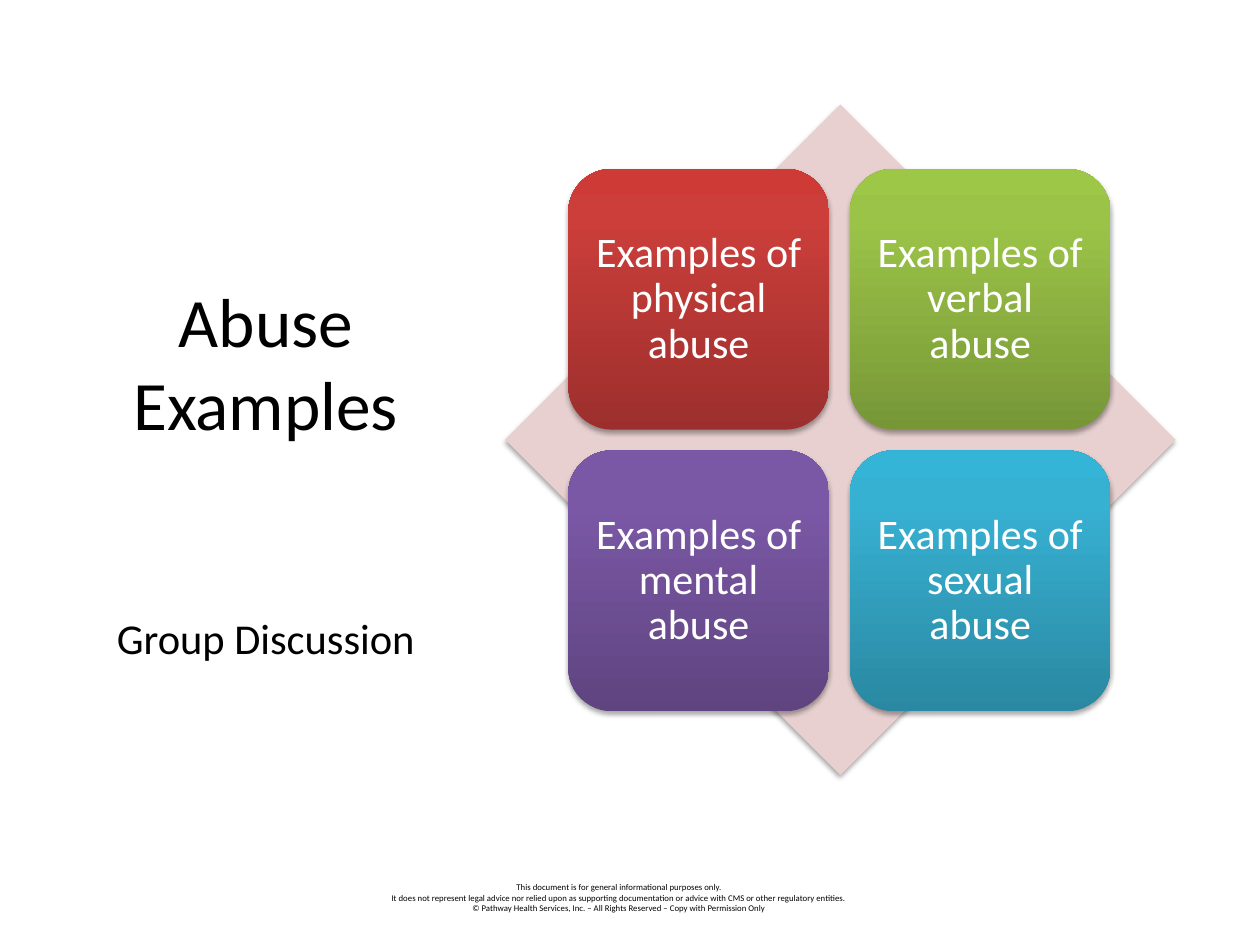
from copy import deepcopy

from lxml import etree
from pptx import Presentation
from pptx.dml.color import RGBColor
from pptx.enum.shapes import MSO_SHAPE as SHAPE
from pptx.enum.text import MSO_ANCHOR as ANCHOR, PP_ALIGN as ALIGN
from pptx.oxml.ns import qn
from pptx.util import Inches, Pt

FONT = "Calibri"
BLACK, WHITE = "000000", "FFFFFF"
DIAMOND_COLOR = "E8D0D0"
CARD_SIZE, CARD_PITCH = 2.07, 2.235
CARDS_LEFT, CARDS_TOP = 4.51, 1.34
STOP_POSITIONS = (0, 0.8, 1)
CARDS = [
    ("Examples of physical abuse", ("9C2F2D", "CB3E3A", "CE3B37")),
    ("Examples of verbal abuse", ("779737", "9BC348", "9DC746")),
    ("Examples of mental abuse", ("5F4480", "7B58A6", "7C57A8")),
    ("Examples of sexual abuse", ("2A88A2", "37B1D2", "34B4D6")),
]
DISCLAIMER = [
    "This document is for general informational purposes only.",
    "It does not represent legal advice nor relied upon as supporting documentation "
    "or advice with CMS or other regulatory entities.",
    "© Pathway Health Services, Inc. – All Rights Reserved – Copy with Permission Only",
]


def rgb(color):
    return RGBColor.from_string(color)


def write(tf, lines, color=BLACK, **frame_format):
    """Fill a text frame with centred paragraphs from (text, size, paragraph format)."""
    tf.word_wrap = True
    for name, value in frame_format.items():
        setattr(tf, name, value)
    for i, (text, size, paragraph_format) in enumerate(lines):
        p = tf.paragraphs[0] if i == 0 else tf.add_paragraph()
        p.alignment = ALIGN.CENTER
        for name, value in paragraph_format.items():
            setattr(p, name, value)
        r = p.add_run()
        r.text = text
        for name, value in {"name": FONT, "size": Pt(size)}.items():
            setattr(r.font, name, value)
        r.font.color.rgb = rgb(color)


def add_text(slide, box, lines, **frame_format):
    s = slide.shapes.add_textbox(*map(Inches, box))
    write(s.text_frame, lines, **frame_format)


def add_shadow(s):
    s.shadow.inherit = False
    effects = s._element.spPr.find(qn("a:effectLst"))
    shadow = etree.SubElement(
        effects, qn("a:outerShdw"), blurRad=str(Pt(3.1)), dist=str(Pt(1.8)),
        dir="5400000", rotWithShape="0")
    color = etree.SubElement(shadow, qn("a:srgbClr"), val=BLACK)
    etree.SubElement(color, qn("a:alpha"), val="35000")


def add_shape(slide, kind, box):
    s = slide.shapes.add_shape(kind, *map(Inches, box))
    s.line.fill.background()
    add_shadow(s)
    return s


def fill_gradient(s, colors):
    """Blend three colours from the bottom of the shape to its top."""
    s.fill.gradient()
    s.fill.gradient_angle = 90
    stop_list = s._element.spPr.find(qn("a:gradFill")).find(qn("a:gsLst"))
    stop_list.append(deepcopy(stop_list[-1]))
    for stop, position, color in zip(s.fill.gradient_stops, STOP_POSITIONS, colors):
        stop.position = position
        stop.color.rgb = rgb(color)


def add_card(slide, index, text, colors):
    row, col = divmod(index, 2)
    s = add_shape(slide, SHAPE.ROUNDED_RECTANGLE,
                  (CARDS_LEFT + col * CARD_PITCH, CARDS_TOP + row * CARD_PITCH,
                   CARD_SIZE, CARD_SIZE))
    fill_gradient(s, colors)
    sides = ("left", "top", "right", "bottom")
    margins = {f"margin_{side}": Inches(0.1) for side in sides}
    write(s.text_frame, [(text, 24, {"line_spacing": 0.9})], WHITE,
          vertical_anchor=ANCHOR.MIDDLE, **margins)


def main():
    prs = Presentation()
    prs.slide_width, prs.slide_height = Inches(10), Inches(7.5)
    slide = prs.slides.add_slide(prs.slide_layouts[6])

    add_text(slide, (2.75, 6.95, 4.33, 0.35), [(line, 5, {}) for line in DISCLAIMER])
    add_text(slide, (0.71, 1.77, 2.8, 3.93),
             [("Abuse Examples", 39.6, {}),
              ("Group Discussion", 24.3, {"space_before": Pt(96)})],
             vertical_anchor=ANCHOR.MIDDLE)

    diamond = add_shape(slide, SHAPE.DIAMOND, (4.01, 0.83, 5.32, 5.32))
    diamond.fill.solid()
    diamond.fill.fore_color.rgb = rgb(DIAMOND_COLOR)
    for i, (text, colors) in enumerate(CARDS):
        add_card(slide, i, text, colors)

    prs.save("out.pptx")


if __name__ == "__main__":
    main()
